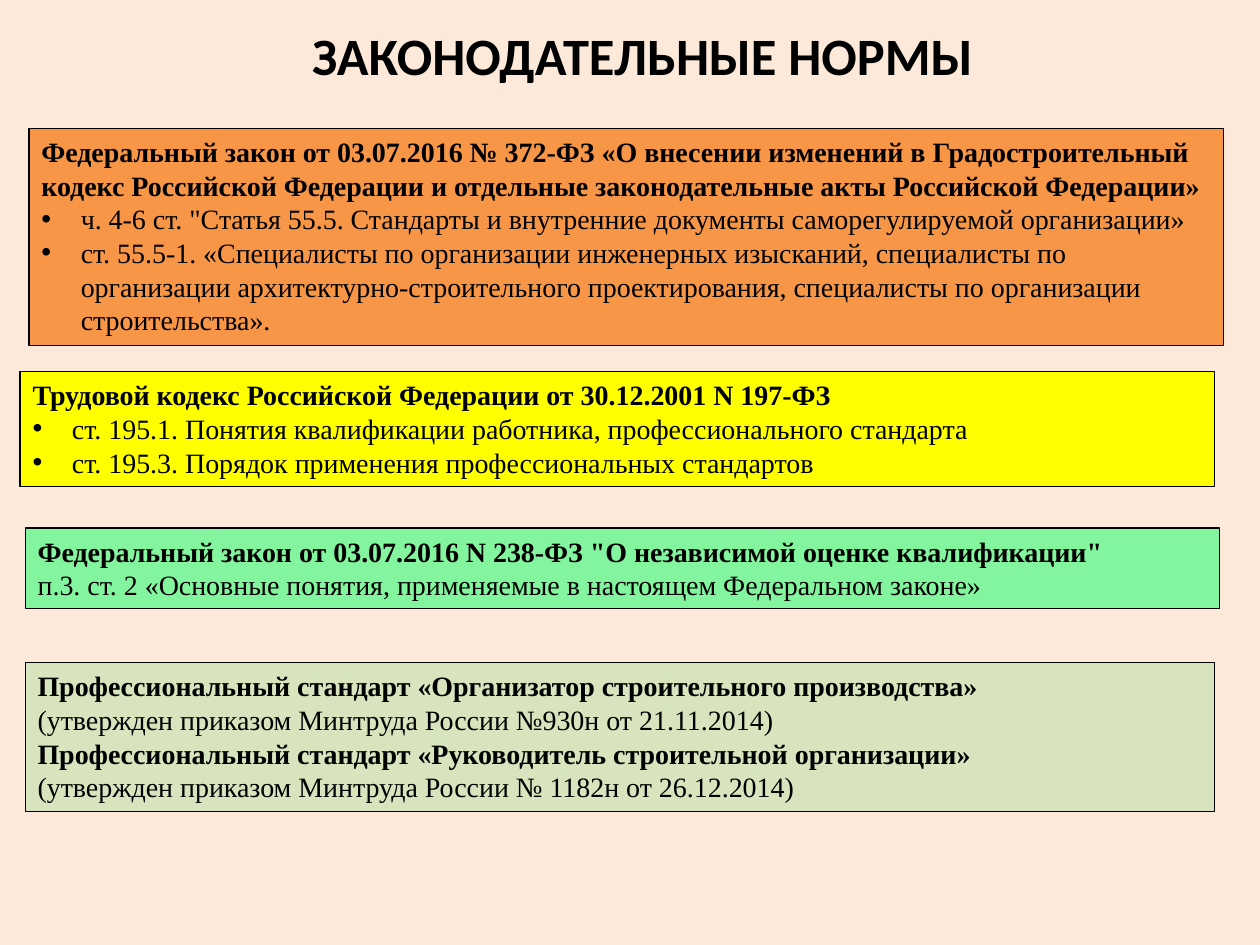
import pptx
import pptx.dml.color
import pptx.enum.shapes
import pptx.enum.text
import pptx.oxml.ns
import pptx.util
from lxml import etree

Pt = pptx.util.Pt
ALIGN = pptx.enum.text.PP_ALIGN
ANCHOR = pptx.enum.text.MSO_ANCHOR
AUTO_SIZE = pptx.enum.text.MSO_AUTO_SIZE

COLORS = {
    "background": "FDE9D9",
    "ink": "000000",
    "town_planning": "F79646",
    "labour": "FFFF00",
    "qualification": "83F59E",
    "standards": "D7E4BD",
}
BULLET_INDENT = 22.5

HEADING = {"bold": True}
JUSTIFIED = {"align": ALIGN.JUSTIFY}
JUSTIFIED_HEADING = {"bold": True, "align": ALIGN.JUSTIFY}
BULLET = {"bullet": True}

LAWS = [
    ("town_planning", (16.56, 73.44, 682.56, 123.84), [
        ("Федеральный закон от 03.07.2016 № 372-ФЗ «О внесении изменений в Градостроительный "
         "кодекс Российской Федерации и отдельные законодательные акты Российской Федерации»", HEADING),
        ("ч. 4-6 ст. \"Статья 55.5. Стандарты и внутренние документы саморегулируемой организации»", BULLET),
        ("ст. 55.5-1. «Специалисты по организации инженерных изысканий, специалисты по "
         "организации архитектурно-строительного проектирования, специалисты по организации "
         "строительства».", BULLET),
    ]),
    ("labour", (11.52, 212.4, 682.56, 65.52), [
        ("Трудовой кодекс Российской Федерации от 30.12.2001 N 197-ФЗ", JUSTIFIED_HEADING),
        ("ст. 195.1. Понятия квалификации работника, профессионального стандарта", BULLET),
        ("ст. 195.3. Порядок применения профессиональных стандартов", BULLET),
    ]),
    ("qualification", (14.4, 301.68, 682.56, 46.08), [
        ("Федеральный закон от 03.07.2016 N 238-ФЗ \"О независимой оценке квалификации\"", JUSTIFIED_HEADING),
        ("п.3. ст. 2 «Основные понятия, применяемые в настоящем Федеральном законе»", {}),
    ]),
    ("standards", (14.4, 378.72, 679.68, 84.96), [
        ("Профессиональный стандарт «Организатор строительного производства»", JUSTIFIED_HEADING),
        ("(утвержден приказом Минтруда России №930н от 21.11.2014)", JUSTIFIED),
        ("Профессиональный стандарт «Руководитель строительной организации»", JUSTIFIED_HEADING),
        ("(утвержден приказом Минтруда России № 1182н от 26.12.2014)", JUSTIFIED),
    ]),
]


def rgb(name):
    return pptx.dml.color.RGBColor.from_string(COLORS[name])


def add_bullet(paragraph):
    properties = paragraph._p.get_or_add_pPr()
    properties.set("marL", str(Pt(BULLET_INDENT)))
    properties.set("indent", str(-Pt(BULLET_INDENT)))
    for tag, key, value in (("a:buFont", "typeface", "Arial"), ("a:buChar", "char", "•")):
        etree.SubElement(properties, pptx.oxml.ns.qn(tag)).set(key, value)


def write_text(paragraph, text, size=16, font="Times New Roman", bold=False,
               align=ALIGN.LEFT, bullet=False):
    paragraph.alignment = align
    if bullet:
        add_bullet(paragraph)
    run = paragraph.add_run()
    run.text = text
    run.font.size = Pt(size)
    run.font.name = font
    run.font.bold = bold
    run.font.color.rgb = rgb("ink")


def add_title(slide, text):
    title = slide.shapes.title
    title.left, title.top, title.width, title.height = map(Pt, (99.36, 13.68, 535.68, 35.28))
    frame = title.text_frame
    frame.vertical_anchor = ANCHOR.MIDDLE
    frame.auto_size = AUTO_SIZE.NONE
    write_text(frame.paragraphs[0], text, size=30, font="Calibri", bold=True, align=ALIGN.CENTER)


def add_law(slide, color, bounds, provisions):
    law = slide.shapes.add_shape(pptx.enum.shapes.MSO_SHAPE.RECTANGLE, *map(Pt, bounds))
    law.shadow.inherit = False
    law.fill.solid()
    law.fill.fore_color.rgb = rgb(color)
    law.line.color.rgb = rgb("ink")
    law.line.width = Pt(0.75)
    frame = law.text_frame
    frame.word_wrap = True
    frame.vertical_anchor = ANCHOR.TOP
    frame.auto_size = AUTO_SIZE.SHAPE_TO_FIT_TEXT
    for index, (text, style) in enumerate(provisions):
        paragraph = frame.add_paragraph() if index else frame.paragraphs[0]
        write_text(paragraph, text, **style)


def main():
    deck = pptx.Presentation()
    deck.slide_width, deck.slide_height = Pt(720), Pt(540)
    slide = deck.slides.add_slide(deck.slide_layouts[5])
    slide.background.fill.solid()
    slide.background.fill.fore_color.rgb = rgb("background")
    for color, bounds, provisions in LAWS:
        add_law(slide, color, bounds, provisions)
    add_title(slide, "ЗАКОНОДАТЕЛЬНЫЕ НОРМЫ")
    deck.save("out.pptx")


if __name__ == "__main__":
    main()
